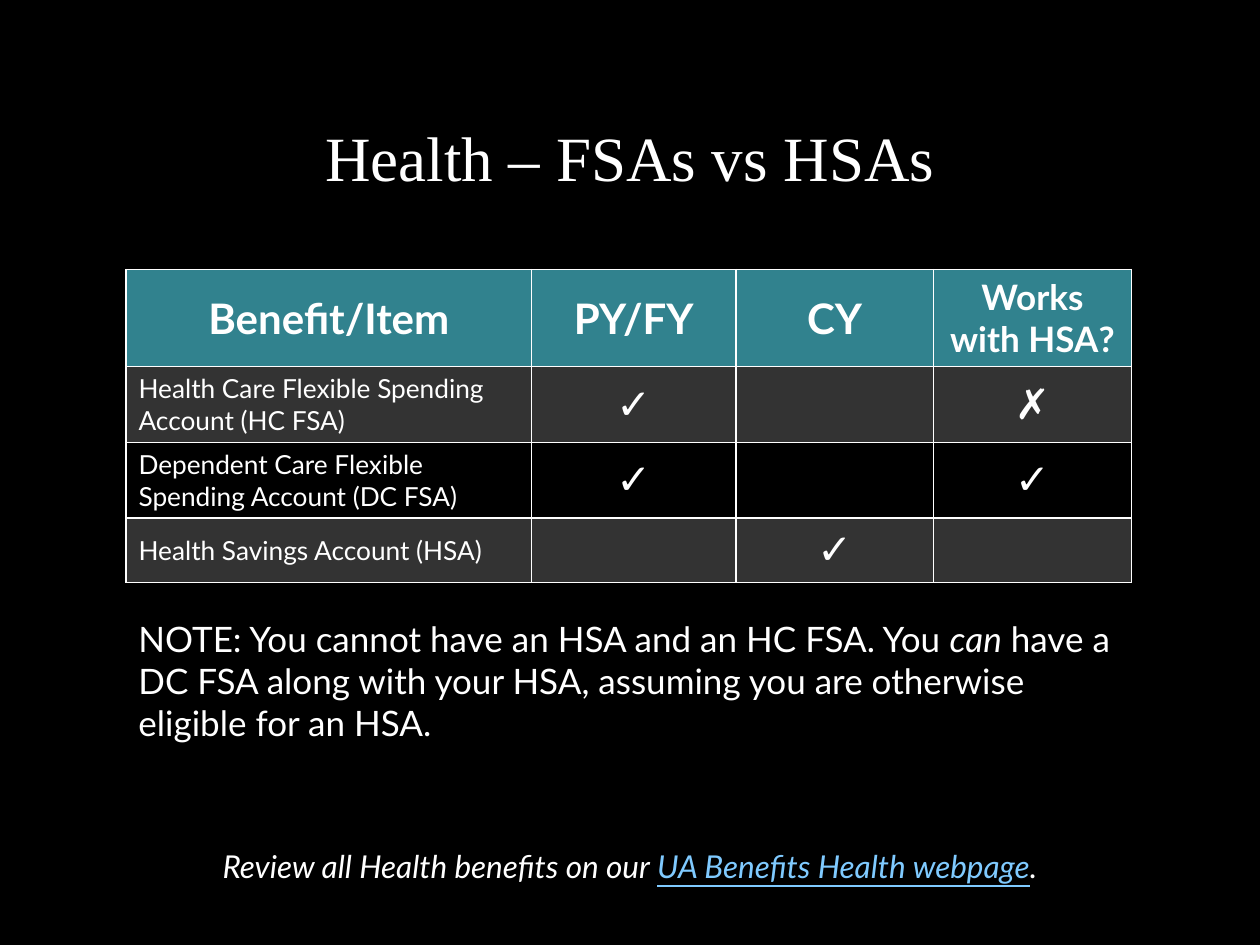
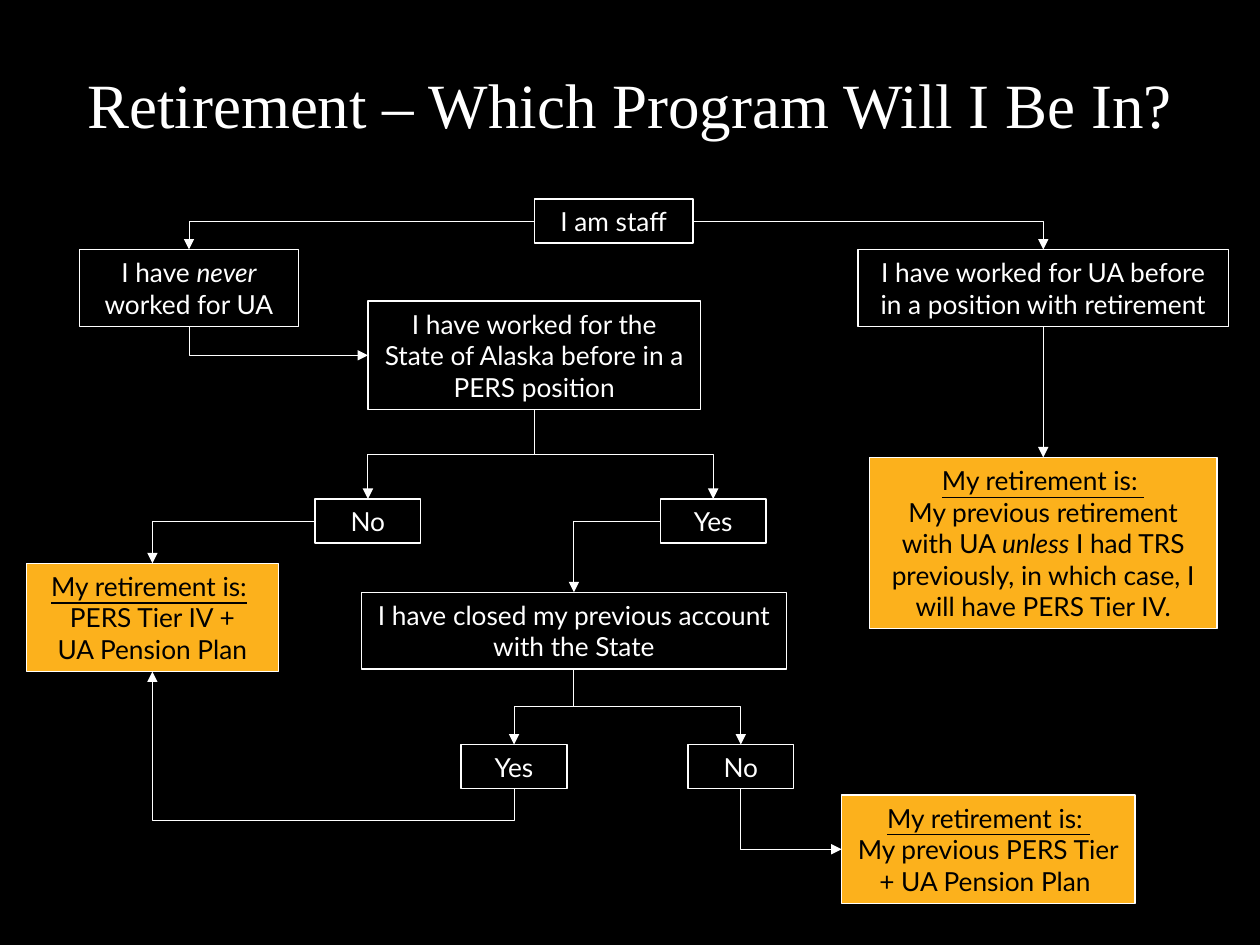
"""Build two benefits slides: a savings account table and a retirement flowchart."""
from lxml import etree
from pptx import Presentation
from pptx.dml.color import RGBColor
from pptx.enum import shapes, text
from pptx.oxml.ns import qn
from pptx.util import Emu, Inches, Pt

BLACK = RGBColor(0x00, 0x00, 0x00)
WHITE = RGBColor(0xFF, 0xFF, 0xFF)
TEAL = RGBColor(0x31, 0x82, 0x8E)
GOLD = RGBColor(0xFC, 0xB1, 0x1C)
LINK_BLUE = RGBColor(0x7F, 0xCA, 0xFF)
BODY_FONT, TITLE_FONT, MARK_FONT = "Lato", "Times New Roman", "Arial"
CENTER, LEFT = text.PP_ALIGN.CENTER, text.PP_ALIGN.LEFT
TOP_SITE, LEFT_SITE, BOTTOM_SITE, RIGHT_SITE = range(4)
QUARTER_TURN = 5400000

BENEFIT_HEADS = [("Benefit/Item", 24), ("PY/FY", 24), ("CY", 24), ("Works with HSA?", 20)]
BENEFITS = [
    ("Health Care Flexible Spending Account (HC FSA)", "✓", "", "✗"),
    ("Dependent Care Flexible Spending Account (DC FSA)", "✓", "", "✓"),
    ("Health Savings Account (HSA)", "", "✓", ""),
]
BENEFIT_WIDTHS = (3.22, 1.62, 1.57, 1.57)
BENEFIT_HEIGHTS = (0.76, 0.6, 0.6, 0.51)

ANSWER_SIZE = (0.84, 0.35)
QUESTIONS = {
    "staff": (4.03, 0, 1.26, 0.35, [[("I am staff", "")]]),
    "never": (0.42, 0.4, 1.74, 0.61,
              [[("I have ", ""), ("never", "i"), (" worked for UA", "")]]),
    "before": (6.6, 0.4, 2.94, 0.61,
               [[("I have worked for UA before in a position with retirement", "")]]),
    "state": (2.71, 0.81, 2.64, 0.86,
              [[("I have worked for the State of Alaska before in a PERS position", "")]]),
    "state no": (2.29, 2.38, *ANSWER_SIZE, [[("No", "")]]),
    "state yes": (5.03, 2.38, *ANSWER_SIZE, [[("Yes", "")]]),
    "closed": (2.66, 3.12, 3.37, 0.61,
               [[("I have closed my previous account with the State", "")]]),
    "closed yes": (3.45, 4.33, *ANSWER_SIZE, [[("Yes", "")]]),
    "closed no": (5.25, 4.33, *ANSWER_SIZE, [[("No", "")]]),
}
OUTCOMES = {
    "tier four": (0, 2.89, 2, 0.86,
                  [[("My retirement is:", "u"), (" ", "")],
                   [("PERS Tier IV +", "")], [("UA Pension Plan", "")]]),
    "previous tier": (6.47, 4.73, 2.33, 0.86,
                      [[("My retirement is: ", "u")],
                       [("My previous PERS Tier", "")], [("+ UA Pension Plan ", "")]]),
    "previous plan": (6.69, 2.05, 2.76, 1.36,
                      [[("My retirement is: ", "u")],
                       [("My previous retirement with UA ", ""), ("unless", "i"),
                        (" I had TRS previously, in which case, I will have PERS Tier IV.", "")]]),
}
LINKS = [
    ("staff", LEFT_SITE, "never", TOP_SITE),
    ("staff", RIGHT_SITE, "before", TOP_SITE),
    ("never", BOTTOM_SITE, "state", LEFT_SITE),
    ("before", BOTTOM_SITE, "previous plan", TOP_SITE),
    ("state", BOTTOM_SITE, "state no", TOP_SITE),
    ("state", BOTTOM_SITE, "state yes", TOP_SITE),
    ("state no", LEFT_SITE, "tier four", TOP_SITE),
    ("state yes", LEFT_SITE, "closed", TOP_SITE),
    ("closed", BOTTOM_SITE, "closed yes", TOP_SITE),
    ("closed", BOTTOM_SITE, "closed no", TOP_SITE),
    ("closed yes", BOTTOM_SITE, "tier four", BOTTOM_SITE),
    ("closed no", BOTTOM_SITE, "previous tier", LEFT_SITE),
]


def add_span(para, words, size, color=WHITE, font=BODY_FONT, marks=""):
    """Add a run; marks may hold b, i and u for bold, italic and underline."""
    span = para.add_run()
    span.text = words
    span.font.name, span.font.size = font, Pt(size)
    span.font.color.rgb = color
    span.font.bold = "b" in marks
    span.font.italic = "i" in marks
    span.font.underline = "u" in marks


def add_page(deck, title, box):
    """Add a title-only slide and place its title in the box."""
    page = deck.slides.add_slide(deck.slide_layouts[5])
    holder = page.shapes.title
    holder.left, holder.top, holder.width, holder.height = map(Inches, box)
    holder.text_frame.vertical_anchor = text.MSO_ANCHOR.MIDDLE
    para = holder.text_frame.paragraphs[0]
    para.alignment = CENTER
    add_span(para, title, 36, font=TITLE_FONT)
    return page


def add_text(page, box, size, spans, align=LEFT):
    """Add a wrapping one-paragraph text box from (words, colour, marks) spans."""
    frame = page.shapes.add_textbox(*map(Inches, box)).text_frame
    frame.word_wrap = True
    para = frame.paragraphs[0]
    para.alignment = align
    for words, color, marks in spans:
        add_span(para, words, size, color, marks=marks)


def style_cell(cell, fill, opacity=100):
    """Give a cell thin white borders and a fill, or no fill at all."""
    cell.vertical_anchor = text.MSO_ANCHOR.MIDDLE
    properties = cell._tc.get_or_add_tcPr()
    for side in ("lnL", "lnR", "lnT", "lnB"):
        border = etree.SubElement(properties, qn(f"a:{side}"), w=str(Pt(1)))
        paint = etree.SubElement(border, qn("a:solidFill"))
        etree.SubElement(paint, qn("a:srgbClr"), val=str(WHITE))
    if fill is None:
        cell.fill.background()
        return
    cell.fill.solid()
    cell.fill.fore_color.rgb = fill
    if opacity < 100:
        color = properties.find(qn("a:solidFill"))[0]
        etree.SubElement(color, qn("a:alpha"), val=str(opacity * 1000))


def add_benefit_table(page, box):
    """Add the table of benefits with their plan years."""
    table = page.shapes.add_table(
        len(BENEFITS) + 1, len(BENEFIT_HEADS), *map(Inches, box)).table
    table.first_row = table.horz_banding = False
    for column, width in zip(table.columns, BENEFIT_WIDTHS):
        column.width = Inches(width)
    for row, height in zip(table.rows, BENEFIT_HEIGHTS):
        row.height = Inches(height)
    for index, (head, size) in enumerate(BENEFIT_HEADS):
        cell = table.cell(0, index)
        style_cell(cell, TEAL)
        para = cell.text_frame.paragraphs[0]
        para.alignment = CENTER
        add_span(para, head, size, marks="b")
    for row, entries in enumerate(BENEFITS, 1):
        for index, words in enumerate(entries):
            cell = table.cell(row, index)
            style_cell(cell, WHITE if row % 2 else None, 20)
            if words:
                para = cell.text_frame.paragraphs[0]
                para.alignment = CENTER if index else LEFT
                size, font = (24, MARK_FONT) if index else (15, BODY_FONT)
                add_span(para, words, size, font=font)


def add_node(page, box, paragraphs, fill=None):
    """Add a flowchart box; filled ones carry black text."""
    node = page.shapes.add_shape(shapes.MSO_SHAPE.RECTANGLE, *map(Inches, box))
    node.shadow.inherit = False
    node.line.color.rgb, node.line.width = WHITE, Pt(0.75)
    if fill is None:
        node.fill.background()
    else:
        node.fill.solid()
        node.fill.fore_color.rgb = fill
    frame = node.text_frame
    frame.word_wrap = True
    frame.vertical_anchor = text.MSO_ANCHOR.MIDDLE
    for index, spans in enumerate(paragraphs):
        para = frame.add_paragraph() if index else frame.paragraphs[0]
        para.alignment = CENTER
        for words, marks in spans:
            add_span(para, words, 15, BLACK if fill else WHITE, marks=marks)
    return node


def bend(link, upright, corner):
    """Turn an elbow so that it leaves its start upright or level."""
    start_x, start_y, end_x, end_y = link.begin_x, link.begin_y, link.end_x, link.end_y
    across, down = end_x - start_x, end_y - start_y
    width, height = abs(across), abs(down)
    if upright:
        width, height = height, width
        turns = 3 if across > 0 else 1
        flip = "flipH" if (across > 0) == (down > 0) else None
    else:
        turns, flip = (0, None) if across > 0 else (2, "flipV")
    frame = link._element.spPr.find(qn("a:xfrm"))
    for name in ("flipH", "flipV"):
        frame.attrib.pop(name, None)
    if turns:
        frame.set("rot", str(turns * QUARTER_TURN))
    if flip:
        frame.set(flip, "1")
    link.left = Emu((start_x + end_x - width) // 2)
    link.top = Emu((start_y + end_y - height) // 2)
    link.width, link.height = Emu(width), Emu(height)
    geometry = link._element.spPr.find(qn("a:prstGeom"))
    if corner:
        geometry.set("prst", "bentConnector2")
    elif down < 0:
        etree.SubElement(geometry.find(qn("a:avLst")), qn("a:gd"),
                         name="adj1", fmla="val -26800")


def add_link(page, source, source_site, target, target_site):
    """Join two nodes by an arrow that is straight when they are aligned."""
    upright = source_site in (TOP_SITE, BOTTOM_SITE)
    corner = upright != (target_site in (TOP_SITE, BOTTOM_SITE))
    middles = [node.left + node.width // 2 for node in (source, target)]
    straight = not corner and abs(middles[0] - middles[1]) < Inches(0.02)
    kind = shapes.MSO_CONNECTOR.STRAIGHT if straight else shapes.MSO_CONNECTOR.ELBOW
    link = page.shapes.add_connector(kind, 0, 0, 0, 0)
    link.begin_connect(source, source_site)
    link.end_connect(target, target_site)
    if not straight:
        bend(link, upright, corner)
    link.line.color.rgb, link.line.width = WHITE, Pt(0.5)
    properties = link._element.spPr
    etree.SubElement(properties.find(qn("a:ln")), qn("a:tailEnd"), type="triangle")
    etree.SubElement(properties, qn("a:effectLst"))


def add_flowchart(page, box):
    """Add the retirement decision tree from the top left of the box."""
    nodes = {}
    for group, fill in ((QUESTIONS, None), (OUTCOMES, GOLD)):
        for name, (left, top, width, height, paragraphs) in group.items():
            place = (box[0] + left, box[1] + top, width, height)
            nodes[name] = add_node(page, place, paragraphs, fill)
    for source, source_site, target, target_site in LINKS:
        add_link(page, nodes[source], source_site, nodes[target], target_site)


def add_health_page(deck):
    """Add the slide that compares FSAs and HSAs."""
    page = add_page(deck, "Health – FSAs vs HSAs", (1.11, 0.84, 7.78, 0.8))
    add_benefit_table(page, (1, 2.14, sum(BENEFIT_WIDTHS), sum(BENEFIT_HEIGHTS)))
    add_text(page, (1, 4.85, 7.99, 1.11), 20, [
        ("NOTE: You cannot have an HSA and an HC FSA. You ", WHITE, ""),
        ("can", WHITE, "i"),
        (" have a DC FSA along with your HSA, assuming you are otherwise "
         "eligible for an HSA.", WHITE, "")])
    add_text(page, (0.62, 6.67, 8.76, 0.4), 18, [
        ("Review all Health benefits on our ", WHITE, "i"),
        ("UA Benefits Health webpage", LINK_BLUE, "iu"),
        (".", WHITE, "i")], CENTER)


def add_retirement_page(deck):
    """Add the slide with the retirement flowchart."""
    page = add_page(deck, "Retirement – Which Program Will I Be In?", (0.5, 0.42, 9, 0.8))
    add_flowchart(page, (0.21, 1.58, 9.54, 5.59))


def main():
    """Build and save the deck."""
    deck = Presentation()
    deck.slide_width, deck.slide_height = Inches(10), Inches(7.5)
    backdrop = deck.slide_master.background.fill
    backdrop.solid()
    backdrop.fore_color.rgb = BLACK
    add_health_page(deck)
    add_retirement_page(deck)
    deck.save("out.pptx")


if __name__ == "__main__":
    main()
